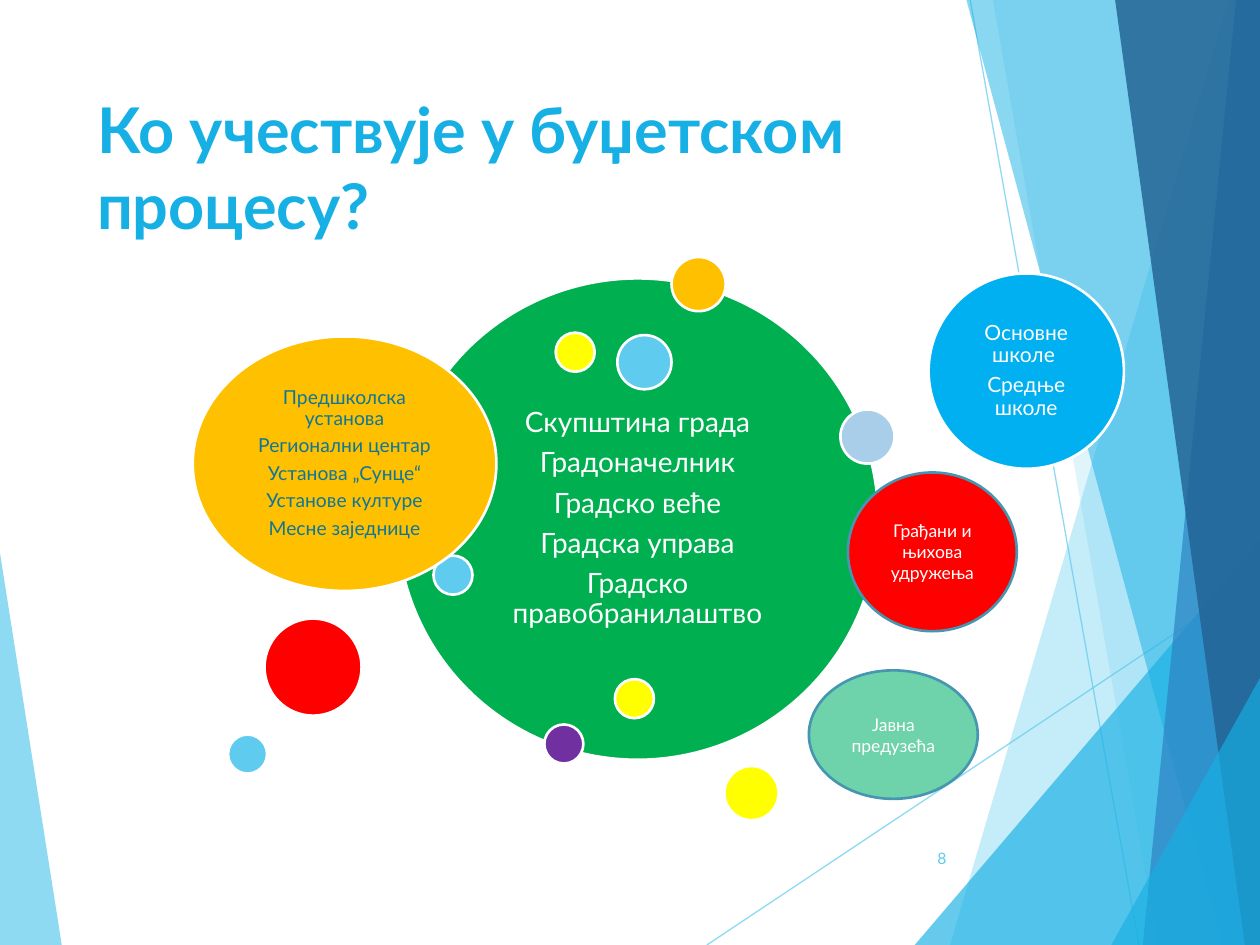
import pptx
import pptx.util
import pptx.dml.color
import pptx.enum.shapes
import pptx.enum.text
from lxml import etree

PX = 9144  # EMU per px, 100 px to the inch
W, H = 1000, 750
FONT = "Lato"
A = "http://schemas.openxmlformats.org/drawingml/2006/main"
COLORS = {
    "white": "FFFFFF", "sky": "5FCBEF", "cyan": "17B0E4", "blue": "2E83C3",
    "navy": "226292", "azure": "00B0F0", "pale": "A8CEEA", "teal": "0F7698",
    "green": "00B050", "mint": "6ED2AA", "amber": "FFC000", "yellow": "FFFF00",
    "red": "FF0000", "purple": "7030A0", "edge": "4696B1",
}

TITLE = "Ко учествује у буџетском процесу?"
PAGE = "8"

# Background facets: colour, opacity in percent, corners
FACETS = [
    ("sky", 70, [(0, 439), (49, 750), (0, 750)]),
    ("sky", 36, [(975, 0), (754, 750), (W, 750), (W, 0)]),
    ("sky", 20, [(788, 0), (919, 750), (W, 750), (W, 0)]),
    ("cyan", 66, [(726, 750), (W, 429), (W, 750)]),
    ("cyan", 50, [(767, 0), (970, 750), (W, 750), (W, 0)]),
    ("blue", 70, [(981, 0), (907, 750), (W, 750), (W, 0)]),
    ("navy", 82, [(885, 0), (988, 750), (W, 750), (W, 0)]),
    ("cyan", 66, [(882, 750), (W, 538), (W, 750)]),
]
RAYS = [(561, 750, 1001, 457), (770, 0, 904, 750)]

# Bubbles, back to front: left, top, width, height, fill, text group
BUBBLES = [
    (315, 221, 382, 382, "green", "city"),
    (533, 204, 43, 43, "amber", None),
    (432, 575, 31, 31, "purple", None),
    (722, 377, 31, 31, "sky", None),
    (575, 608, 43, 43, "yellow", None),
    (441, 264, 31, 31, "yellow", None),
    (344, 441, 31, 31, "sky", None),
    (153, 267, 241, 202, "amber", "institutions"),
    (490, 266, 43, 43, "sky", None),
    (210, 491, 77, 77, "red", None),
    (737, 217, 155, 155, "azure", "schools"),
    (667, 325, 43, 43, "pale", None),
    (181, 583, 31, 31, "sky", None),
    (488, 539, 31, 31, "yellow", None),
]
# Text groups: size, colour, inset, paragraphs
GROUPS = {
    "city": (16, "white", 7, ["Скупштина града", "Градоначелник", "Градско веће",
                              "Градска управа", "Градско правобранилаштво"]),
    "institutions": (11, "teal", 5, ["Предшколска установа", "Регионални центар",
                                     "Установа „Сунце“", "Установе културе",
                                     "Месне заједнице"]),
    "schools": (12, "white", 5, ["Основне школе ", "Средње школе"]),
}
# Outlined ovals: left, top, width, height, fill, text
OVALS = [
    (673, 375, 134, 126, "red", "Грађани и њихова удружења"),
    (642, 532, 134, 102, "mint", "Јавна предузећа"),
]


def rgb(name):
    return pptx.dml.color.RGBColor.from_string(COLORS[name])


def box(*lengths):
    return [n * PX for n in lengths]


def set_alpha(sp, percent):
    color = sp._element.spPr.find(f".//{{{A}}}srgbClr")
    etree.SubElement(color, f"{{{A}}}alpha", val=str(percent * 1000))


def paint(sp, fill, line=None):
    sp.shadow.inherit = False
    sp.fill.solid()
    sp.fill.fore_color.rgb = rgb(fill)
    if line:
        sp.line.color.rgb = rgb(line)
        sp.line.width = pptx.util.Pt(1.5)
    else:
        sp.line.fill.background()


def write(sp, texts, size, color, align, anchor="MIDDLE", bold=False):
    tf = sp.text_frame
    tf.text = "\n".join(texts)
    tf.word_wrap = True
    tf.auto_size = pptx.enum.text.MSO_AUTO_SIZE.NONE
    tf.vertical_anchor = getattr(pptx.enum.text.MSO_ANCHOR, anchor)
    for p in tf.paragraphs:
        p.alignment = getattr(pptx.enum.text.PP_ALIGN, align)
        for r in p.runs:
            r.font.name = FONT
            r.font.size = pptx.util.Pt(size)
            r.font.bold = bold
            r.font.color.rgb = rgb(color)
    return tf


def add_oval(s, place, fill, line):
    sp = s.shapes.add_shape(pptx.enum.shapes.MSO_SHAPE.OVAL, *box(*place))
    paint(sp, fill, line)
    return sp


def main():
    prs = pptx.Presentation()
    prs.slide_width, prs.slide_height = box(W, H)
    s = prs.slides.add_slide(prs.slide_layouts[5])

    # Background rays and facets
    for ends in RAYS:
        ray = s.shapes.add_connector(pptx.enum.shapes.MSO_CONNECTOR.STRAIGHT, *box(*ends))
        ray.line.color.rgb = rgb("sky")
        ray.line.width = pptx.util.Pt(0.75)
        set_alpha(ray, 70)
        etree.SubElement(ray._element.spPr, f"{{{A}}}effectLst")
    for color, opacity, corners in FACETS:
        builder = s.shapes.build_freeform(*corners[0], scale=PX)
        builder.add_line_segments(corners[1:], close=True)
        facet = builder.convert_to_shape()
        paint(facet, color)
        set_alpha(facet, opacity)

    # Title and page number
    title = s.shapes.title
    title.left, title.top, title.width, title.height = box(67, 67, 694, 144)
    write(title, [TITLE], 36, "cyan", "LEFT", "TOP", True)
    number = s.shapes.add_textbox(*box(705, 661, 56, 40))
    write(number, [PAGE], 9, "sky", "RIGHT")

    # Bubbles
    for *place, fill, group in BUBBLES:
        sp = add_oval(s, place, fill, "white")
        if group:
            size, color, inset, texts = GROUPS[group]
            tf = write(sp, texts, size, color, "CENTER")
            tf.margin_left = tf.margin_right = inset * PX
            tf.margin_top = tf.margin_bottom = inset * PX
            for p in tf.paragraphs:
                p.line_spacing = 0.9
                p.space_after = pptx.util.Pt(size * 0.35)

    # Outlined ovals
    for *place, fill, text in OVALS:
        write(add_oval(s, place, fill, "edge"), [text], 10, "white", "CENTER")

    prs.save("out.pptx")


if __name__ == "__main__":
    main()
